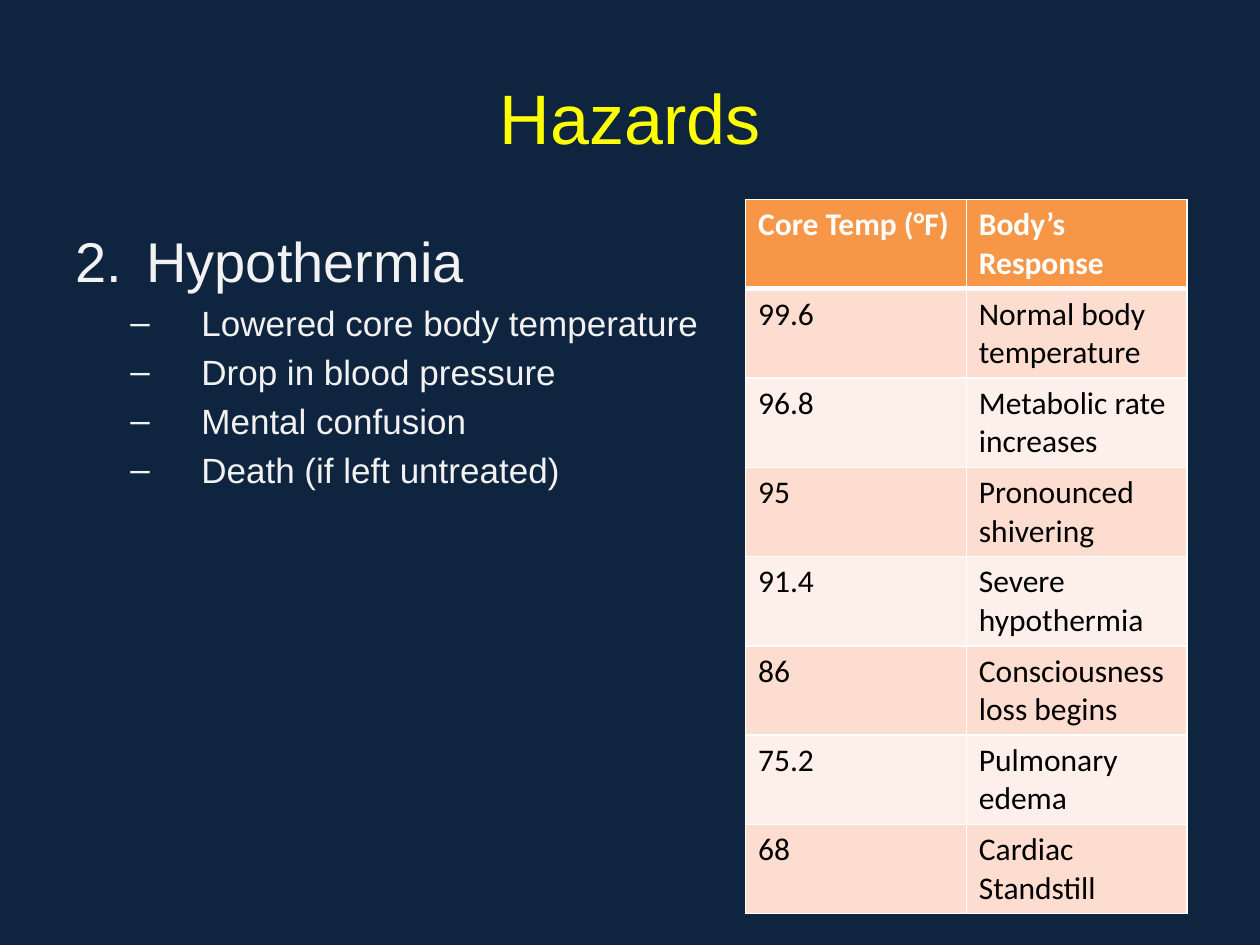
"""Build the Hazards slide: a list on hypothermia beside a table of core temperatures."""

from lxml.etree import SubElement
from pptx import Presentation
from pptx.dml.color import RGBColor
from pptx.enum.text import MSO_ANCHOR, PP_ALIGN
from pptx.oxml.ns import qn
from pptx.util import Cm, Pt

TITLE = "Hazards"
TOPIC = "Hypothermia"
TOPIC_NUMBER = 2
SYMPTOMS = [
    "Lowered core body temperature",
    "Drop in blood pressure",
    "Mental confusion",
    "Death (if left untreated)",
]
RESPONSES = [
    ("Core Temp (°F)", "Body’s Response"),
    ("99.6", "Normal body temperature"),
    ("96.8", "Metabolic rate increases"),
    ("95", "Pronounced shivering"),
    ("91.4", "Severe hypothermia"),
    ("86", "Consciousness loss begins"),
    ("75.2", "Pulmonary edema"),
    ("68", "Cardiac Standstill"),
]
THEME = {
    "background": "0F243E",
    "header": "F79646",
    "bands": ("FDEFE9", "FCDDCF"),
    "border": "FFFFFF",
    "title": {"name": "Arial", "size": Pt(40), "color": "FFFF00"},
    "topic": {"name": "Arial", "size": Pt(32), "color": "F2F2F2"},
    "symptom": {"name": "Arial", "size": Pt(20), "color": "F2F2F2"},
    "heading": {"name": "Calibri", "size": Pt(18), "color": "FFFFFF", "bold": True},
    "cell": {"name": "Calibri", "size": Pt(18), "color": "000000", "bold": False},
}
MARGIN = Cm(1.27)
CONTENT_WIDTH = Cm(22.86)
HANGING = Cm(1.43)
TOPIC_INDENT = Cm(1.43)
SYMPTOM_INDENT = Cm(2.54)
COLUMN_WIDTH = Cm(4.45)
ROW_HEIGHT = Cm(1.8)


def write(para, text, style):
    span = para.add_run()
    span.text = text
    for name, value in THEME[style].items():
        if name == "color":
            span.font.color.rgb = RGBColor.from_string(value)
        else:
            setattr(span.font, name, value)


def add_box(page, top, height, anchor):
    frame = page.shapes.add_textbox(MARGIN, top, CONTENT_WIDTH, height).text_frame
    for name, value in {"word_wrap": True, "vertical_anchor": anchor}.items():
        setattr(frame, name, value)
    return frame


def write_item(para, text, style, indent, tag, **bullet):
    para.space_before = int(THEME[style]["size"] * 0.2)
    properties = para._p.get_or_add_pPr()
    properties.set("marL", str(indent))
    properties.set("indent", str(-HANGING))
    SubElement(properties, qn("a:buFont"), typeface="Arial")
    SubElement(properties, qn(tag), **bullet)
    write(para, text, style)


def add_borders(cell, bottom_width):
    properties = cell._tc.get_or_add_tcPr()
    widths = {"lnL": 1, "lnR": 1, "lnT": 1, "lnB": bottom_width}
    for side, width in widths.items():
        line = SubElement(properties, qn(f"a:{side}"), w=str(Pt(width)))
        fill = SubElement(line, qn("a:solidFill"))
        SubElement(fill, qn("a:srgbClr"), val=THEME["border"])


def add_response_table(page):
    rows, columns = len(RESPONSES), len(RESPONSES[0])
    table = page.shapes.add_table(
        rows, columns, Cm(15.03), Cm(4.02), COLUMN_WIDTH * columns, ROW_HEIGHT * rows
    ).table
    for row_index, texts in enumerate(RESPONSES):
        is_header = row_index == 0
        color = THEME["header"] if is_header else THEME["bands"][row_index % 2]
        for column_index, text in enumerate(texts):
            cell = table.cell(row_index, column_index)
            add_borders(cell, 3 if is_header else 1)
            cell.fill.solid()
            cell.fill.fore_color.rgb = RGBColor.from_string(color)
            write(cell.text_frame.paragraphs[0], text, "heading" if is_header else "cell")
    for column_index in range(columns):
        add_top = table.cell(1, column_index)._tc.tcPr.find(qn("a:lnT"))
        add_top.set("w", str(Pt(3)))


def main():
    deck = Presentation()
    deck.slide_width, deck.slide_height = Cm(25.4), Cm(19.05)
    page = deck.slides.add_slide(deck.slide_layouts[6])
    page.background.fill.solid()
    page.background.fill.fore_color.rgb = RGBColor.from_string(THEME["background"])

    title = add_box(page, Cm(0.76), Cm(3.18), MSO_ANCHOR.MIDDLE).paragraphs[0]
    title.alignment = PP_ALIGN.CENTER
    write(title, TITLE, "title")

    body = add_box(page, Cm(4.45), Cm(12.57), MSO_ANCHOR.TOP)
    write_item(body.paragraphs[0], TOPIC, "topic", TOPIC_INDENT, "a:buAutoNum",
               type="arabicPeriod", startAt=str(TOPIC_NUMBER))
    for symptom in SYMPTOMS:
        para = body.add_paragraph()
        para.level = 1
        write_item(para, symptom, "symptom", SYMPTOM_INDENT, "a:buChar", char="–")

    add_response_table(page)
    deck.save("out.pptx")


if __name__ == "__main__":
    main()
